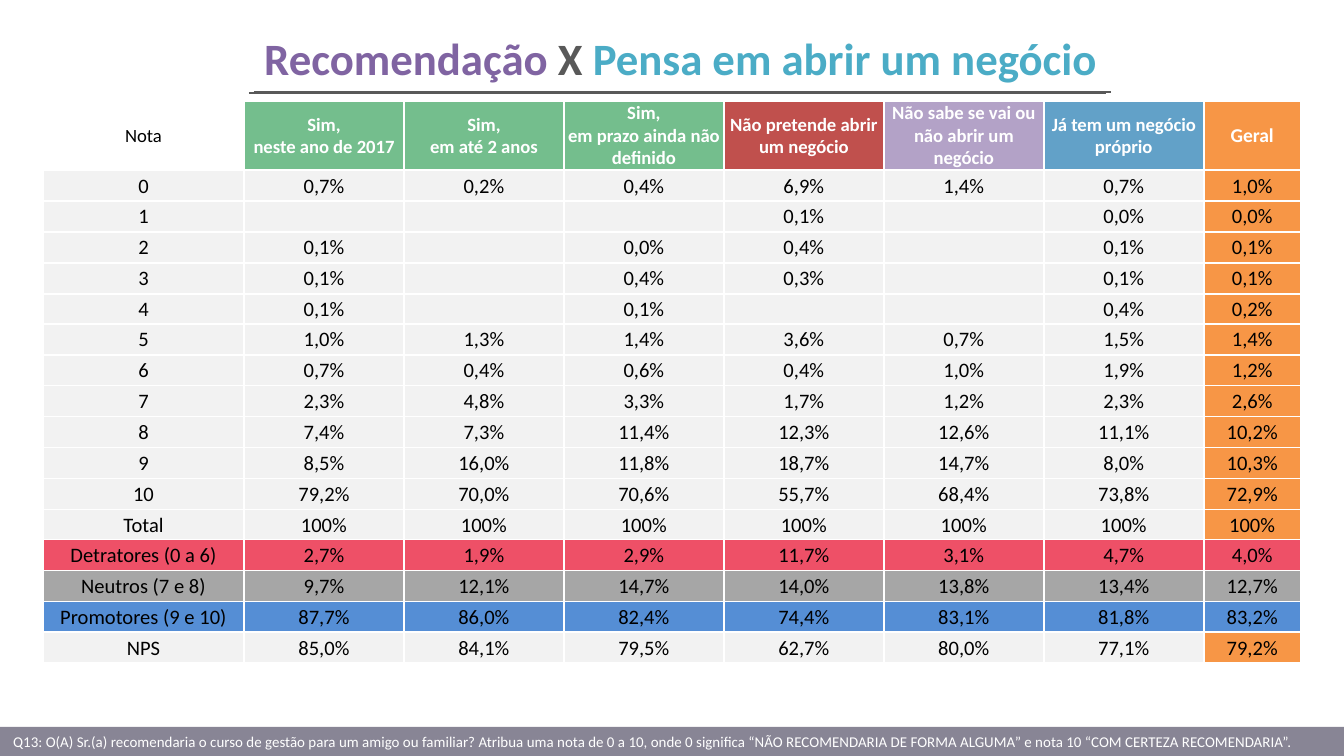
from lxml.etree import SubElement
from pptx import Presentation
from pptx.dml.color import RGBColor
from pptx.enum.shapes import MSO_CONNECTOR, MSO_SHAPE
from pptx.enum.text import MSO_ANCHOR, MSO_AUTO_SIZE, PP_ALIGN
from pptx.oxml.ns import qn
from pptx.util import Pt

EMU_PER_PX = 9144000 / 1344
PAGE_WIDTH, PAGE_HEIGHT = 1344, 756

WHITE = RGBColor(0xFF, 0xFF, 0xFF)
BLACK = RGBColor(0x00, 0x00, 0x00)
DARK_GRAY = RGBColor(0x59, 0x59, 0x59)
LIGHT_GRAY = RGBColor(0xF2, 0xF2, 0xF2)
FOOTER_GRAY = RGBColor(0x88, 0x85, 0x95)
NEUTRAL_GRAY = RGBColor(0xA6, 0xA6, 0xA6)
PURPLE = RGBColor(0x80, 0x64, 0xA2)
LILAC = RGBColor(0xB3, 0xA2, 0xC7)
TEAL = RGBColor(0x4B, 0xAC, 0xC6)
GREEN = RGBColor(0x74, 0xBE, 0x8D)
RED = RGBColor(0xC0, 0x50, 0x4D)
STEEL_BLUE = RGBColor(0x62, 0xA1, 0xC8)
ORANGE = RGBColor(0xF7, 0x96, 0x46)
PINK = RGBColor(0xEE, 0x50, 0x67)
BLUE = RGBColor(0x55, 0x8E, 0xD5)

TITLE = [
    ("Recomendação ", PURPLE),
    ("X ", DARK_GRAY),
    ("Pensa em abrir um negócio", TEAL),
]
QUESTION = (
    "Q13: O(A) Sr.(a) recomendaria o curso de gestão para um amigo ou familiar? "
    "Atribua uma nota de 0 a 10, onde 0 significa “NÃO RECOMENDARIA DE FORMA ALGUMA” "
    "e nota 10 “COM CERTEZA RECOMENDARIA”."
)
HEADERS = [
    ("Nota", None),
    ("Sim,\nneste ano de 2017", GREEN),
    ("Sim,\nem até 2 anos", GREEN),
    ("Sim,\nem prazo ainda não definido", GREEN),
    ("Não pretende abrir um negócio", RED),
    ("Não sabe se vai ou não abrir um negócio", LILAC),
    ("Já tem um negócio próprio", STEEL_BLUE),
    ("Geral", ORANGE),
]
SCORES = [
    ("0", "0,7%", "0,2%", "0,4%", "6,9%", "1,4%", "0,7%", "1,0%"),
    ("1", "", "", "", "0,1%", "", "0,0%", "0,0%"),
    ("2", "0,1%", "", "0,0%", "0,4%", "", "0,1%", "0,1%"),
    ("3", "0,1%", "", "0,4%", "0,3%", "", "0,1%", "0,1%"),
    ("4", "0,1%", "", "0,1%", "", "", "0,4%", "0,2%"),
    ("5", "1,0%", "1,3%", "1,4%", "3,6%", "0,7%", "1,5%", "1,4%"),
    ("6", "0,7%", "0,4%", "0,6%", "0,4%", "1,0%", "1,9%", "1,2%"),
    ("7", "2,3%", "4,8%", "3,3%", "1,7%", "1,2%", "2,3%", "2,6%"),
    ("8", "7,4%", "7,3%", "11,4%", "12,3%", "12,6%", "11,1%", "10,2%"),
    ("9", "8,5%", "16,0%", "11,8%", "18,7%", "14,7%", "8,0%", "10,3%"),
    ("10", "79,2%", "70,0%", "70,6%", "55,7%", "68,4%", "73,8%", "72,9%"),
    ("Total",) + ("100%",) * 7,
    ("Detratores (0 a 6)", "2,7%", "1,9%", "2,9%", "11,7%", "3,1%", "4,7%", "4,0%"),
    ("Neutros (7 e 8)", "9,7%", "12,1%", "14,7%", "14,0%", "13,8%", "13,4%", "12,7%"),
    ("Promotores (9 e 10)", "87,7%", "86,0%", "82,4%", "74,4%", "83,1%", "81,8%", "83,2%"),
    ("NPS", "85,0%", "84,1%", "79,5%", "62,7%", "80,0%", "77,1%", "79,2%"),
]
GROUP_FILLS = {
    "Detratores (0 a 6)": PINK,
    "Neutros (7 e 8)": NEUTRAL_GRAY,
    "Promotores (9 e 10)": BLUE,
}
COLUMN_WIDTHS = [201] + [160] * 6 + [97]
HEADER_HEIGHT, SCORES_HEIGHT = 69, 494


def px(length):
    return round(length * EMU_PER_PX)


class SlideBuilder:
    font_name = "Calibri"

    def __init__(self, slide):
        self.slide = slide

    def format_font(self, font, size, color, bold=False):
        font.name = self.font_name
        font.size = Pt(size)
        font.bold = bold
        font.color.rgb = color

    def title(self, left, top, width, height, parts):
        box = self.slide.shapes.title
        box.left, box.top, box.width, box.height = map(px, (left, top, width, height))
        frame = box.text_frame
        frame.word_wrap = True
        frame.auto_size = MSO_AUTO_SIZE.SHAPE_TO_FIT_TEXT
        frame.vertical_anchor = MSO_ANCHOR.TOP
        para = frame.paragraphs[0]
        para.alignment = PP_ALIGN.CENTER
        for text, color in parts:
            span = para.add_run()
            span.text = text
            self.format_font(span.font, 24, color, bold=True)

    def line(self, left, right, y):
        line = self.slide.shapes.add_connector(
            MSO_CONNECTOR.STRAIGHT, px(left), px(y), px(right), px(y))
        line.line.color.rgb = DARK_GRAY
        line.line.width = Pt(0.75)
        SubElement(line._element.spPr, qn("a:effectLst"))

    def bar(self, left, top, width, height, text):
        bar = self.slide.shapes.add_shape(
            MSO_SHAPE.RECTANGLE, *map(px, (left, top, width, height)))
        bar.shadow.inherit = False
        bar.fill.solid()
        bar.fill.fore_color.rgb = FOOTER_GRAY
        bar.line.fill.background()
        frame = bar.text_frame
        frame.text = text
        frame.vertical_anchor = MSO_ANCHOR.MIDDLE
        para = frame.paragraphs[0]
        para.alignment = PP_ALIGN.LEFT
        self.format_font(para.runs[0].font, 8, WHITE)

    def table(self, left, top, widths, heights):
        table = self.slide.shapes.add_table(
            len(heights), len(widths),
            *map(px, (left, top, sum(widths), sum(heights)))).table
        table.first_row = table.horz_banding = False
        for column, width in zip(table.columns, widths):
            column.width = px(width)
        for row, height in zip(table.rows, heights):
            row.height = px(height)
        return table

    def cell(self, cell, text, fill, size, color=BLACK, bold=False):
        cell.margin_left = cell.margin_right = cell.margin_top = px(1)
        cell.margin_bottom = 0
        cell.vertical_anchor = MSO_ANCHOR.MIDDLE
        self.borders(cell)
        if fill is None:
            cell.fill.background()
        else:
            cell.fill.solid()
            cell.fill.fore_color.rgb = fill
        cell.text_frame.text = text
        for para in cell.text_frame.paragraphs:
            para.alignment = PP_ALIGN.CENTER
            for span in para.runs:
                self.format_font(span.font, size, color, bold)
            if not para.runs:  # keeps an empty cell from stretching its row
                SubElement(para._p, qn("a:endParaRPr"), sz=str(size * 100))

    def borders(self, cell):
        properties = cell._tc.get_or_add_tcPr()
        for side in ("lnL", "lnR", "lnT", "lnB"):
            border = SubElement(properties, qn(f"a:{side}"), w=str(Pt(1)))
            solid = SubElement(border, qn("a:solidFill"))
            SubElement(solid, qn("a:srgbClr"), val=str(WHITE))


def score_heights():
    """Split the body height into whole-px rows without drift."""
    count = len(SCORES)
    edges = [round(SCORES_HEIGHT * i / count) for i in range(count + 1)]
    return [bottom - top for top, bottom in zip(edges, edges[1:])]


def main():
    deck = Presentation()
    deck.slide_width, deck.slide_height = px(PAGE_WIDTH), px(PAGE_HEIGHT)
    page = SlideBuilder(deck.slides.add_slide(deck.slide_layouts[5]))

    page.bar(0, 727, PAGE_WIDTH, 29, QUESTION)

    table = page.table(43, 101, COLUMN_WIDTHS, [HEADER_HEIGHT] + score_heights())
    for column, (text, fill) in enumerate(HEADERS):
        cell = table.cell(0, column)
        if fill is None:
            page.cell(cell, text, fill, 10)
        else:
            page.cell(cell, text, fill, 10.5 if text == "Geral" else 10, WHITE, bold=True)
    last_column = len(HEADERS) - 1
    for row, values in enumerate(SCORES, start=1):
        group_fill = GROUP_FILLS.get(values[0])
        for column, text in enumerate(values):
            fill = group_fill or (ORANGE if column == last_column else LIGHT_GRAY)
            page.cell(table.cell(row, column), text, fill, 11)

    page.line(249, 1106, 93)
    page.title(11, 24, 1339, 67, TITLE)
    page.line(254, 1111, 92)

    deck.save("out.pptx")


if __name__ == "__main__":
    main()
